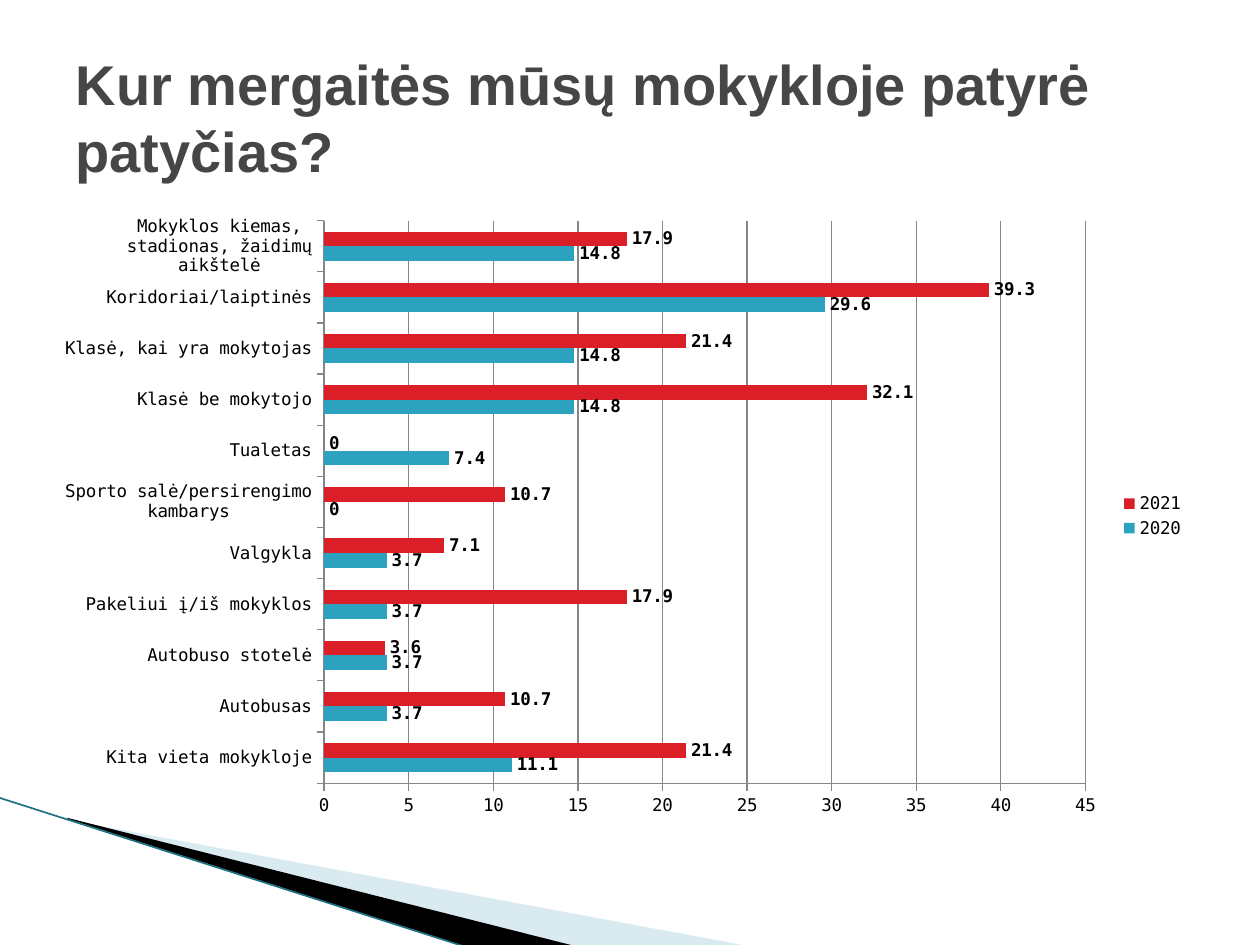
"""Build the slide on where girls at the school experienced bullying."""
from dataclasses import dataclass

from lxml import etree
from pptx import Presentation
from pptx.chart import data as chart_data
from pptx.dml.color import RGBColor
from pptx.enum import chart as ch, shapes, text
from pptx.oxml import ns
from pptx.util import Inches, Pt


@dataclass(frozen=True)
class Theme:
    heading_font: str = "Arial"
    chart_font: str = "DejaVu Sans Mono"
    heading_size: int = 32
    chart_size: int = 10
    heading: str = "464646"
    ink: str = "000000"
    grid: str = "868686"
    edge: str = "1F7184"
    pale: str = "A0CBDC"
    year_2020: str = "2DA2BF"
    year_2021: str = "DA1F28"


@dataclass(frozen=True)
class Wedge:
    points: tuple[tuple[float, float], ...]
    color: str
    opacity: int = 100


@dataclass(frozen=True)
class Place:
    name: str
    share_2020: float
    share_2021: float


THEME = Theme()
WEDGES = (
    Wedge(((0.55, 6.51), (5.95, 7.51), (4.56, 7.51), (0.55, 6.5)), THEME.pale, 40),
    Wedge(((0.53, 6.49), (4.57, 7.51), (3.72, 7.52), (0.54, 6.5)), THEME.ink),
)
PLACES = (
    Place("Kita vieta mokykloje", 11.1, 21.4),
    Place("Autobusas", 3.7, 10.7),
    Place("Autobuso stotelė", 3.7, 3.6),
    Place("Pakeliui į/iš mokyklos", 3.7, 17.9),
    Place("Valgykla", 3.7, 7.1),
    Place("Sporto salė/persirengimo kambarys", 0, 10.7),
    Place("Tualetas", 7.4, 0),
    Place("Klasė be mokytojo", 14.8, 32.1),
    Place("Klasė, kai yra mokytojas", 14.8, 21.4),
    Place("Koridoriai/laiptinės", 29.6, 39.3),
    Place("Mokyklos kiemas, stadionas, žaidimų aikštelė", 14.8, 17.9),
)


def rgb(color: str) -> RGBColor:
    """Turn a hex code into a colour."""
    return RGBColor.from_string(color)


def draw_wedge(slide, wedge: Wedge) -> None:
    """Draw one filled corner wedge."""
    start, *rest = [(Inches(x), Inches(y)) for x, y in wedge.points]
    outline = slide.shapes.build_freeform(*start)
    outline.add_line_segments(rest, close=True)
    corner = outline.convert_to_shape()
    corner.shadow.inherit = False
    corner.fill.solid()
    corner.fill.fore_color.rgb = rgb(wedge.color)
    corner.line.fill.background()
    if wedge.opacity < 100:
        fill_color = corner.fill._xPr.find(".//" + ns.qn("a:srgbClr"))
        etree.SubElement(fill_color, ns.qn("a:alpha"), val=str(wedge.opacity * 1000))


def draw_edge(slide) -> None:
    """Draw the thin line along the corner."""
    edge = slide.shapes.add_connector(
        shapes.MSO_CONNECTOR.STRAIGHT,
        Inches(-0.01), Inches(6.33), Inches(3.71), Inches(7.52))
    edge.line.color.rgb = rgb(THEME.edge)
    edge.line.width = Pt(0.95)
    etree.SubElement(edge._element.spPr, ns.qn("a:effectLst"))


def write_heading(slide, wording: str) -> None:
    """Place and format the title."""
    heading = slide.shapes.title
    heading.left, heading.top = Inches(0.5), Inches(0.3)
    heading.width, heading.height = Inches(9), Inches(1.25)
    frame = heading.text_frame
    frame.word_wrap = True
    frame.auto_size = text.MSO_AUTO_SIZE.NONE
    frame.vertical_anchor = text.MSO_ANCHOR.MIDDLE
    paragraph = frame.paragraphs[0]
    paragraph.alignment = text.PP_ALIGN.LEFT
    run = paragraph.add_run()
    run.text = wording
    run.font.name = THEME.heading_font
    run.font.size = Pt(THEME.heading_size)
    run.font.bold = True
    run.font.color.rgb = rgb(THEME.heading)


def style_font(font, bold: bool = False) -> None:
    """Apply the chart lettering."""
    font.name = THEME.chart_font
    font.size = Pt(THEME.chart_size)
    font.bold = bold
    font.color.rgb = rgb(THEME.ink)


def draw_shares(slide, places: tuple[Place, ...]) -> None:
    """Chart the shares of both years by place."""
    shares = chart_data.CategoryChartData(number_format="General")
    shares.categories = [place.name for place in places]
    shares.add_series("2020", [place.share_2020 for place in places])
    shares.add_series("2021", [place.share_2021 for place in places])
    chart = slide.shapes.add_chart(
        ch.XL_CHART_TYPE.BAR_CLUSTERED, Inches(0.5), Inches(1.62),
        Inches(9), Inches(4.95), shares).chart
    style_font(chart.font)
    chart.has_title = False
    chart.has_legend = True
    chart.legend.position = ch.XL_LEGEND_POSITION.RIGHT
    chart.legend.include_in_layout = False
    for axis in (chart.category_axis, chart.value_axis):
        axis.major_tick_mark = ch.XL_TICK_MARK.OUTSIDE
        axis.minor_tick_mark = ch.XL_TICK_MARK.NONE
        axis.format.line.color.rgb = rgb(THEME.grid)
    scale = chart.value_axis
    scale.minimum_scale, scale.maximum_scale, scale.major_unit = 0, 45, 5
    scale.has_major_gridlines = True
    scale.major_gridlines.format.line.color.rgb = rgb(THEME.grid)
    plot = chart.plots[0]
    plot.gap_width = 150
    plot.vary_by_categories = False
    for year, color in zip(plot.series, (THEME.year_2020, THEME.year_2021)):
        year.format.fill.solid()
        year.format.fill.fore_color.rgb = rgb(color)
        year.invert_if_negative = False
        year.data_labels.show_value = True
        year.data_labels.position = ch.XL_LABEL_POSITION.OUTSIDE_END
        style_font(year.data_labels.font, bold=True)


def main() -> None:
    """Assemble and save the slide."""
    deck = Presentation()
    deck.slide_width, deck.slide_height = Inches(10), Inches(7.5)
    slide = deck.slides.add_slide(deck.slide_layouts.get_by_name("Title Only"))
    for wedge in WEDGES:
        draw_wedge(slide, wedge)
    draw_edge(slide)
    draw_shares(slide, PLACES)
    write_heading(slide, "Kur mergaitės mūsų mokykloje patyrė patyčias?")
    deck.save("out.pptx")


if __name__ == "__main__":
    main()
